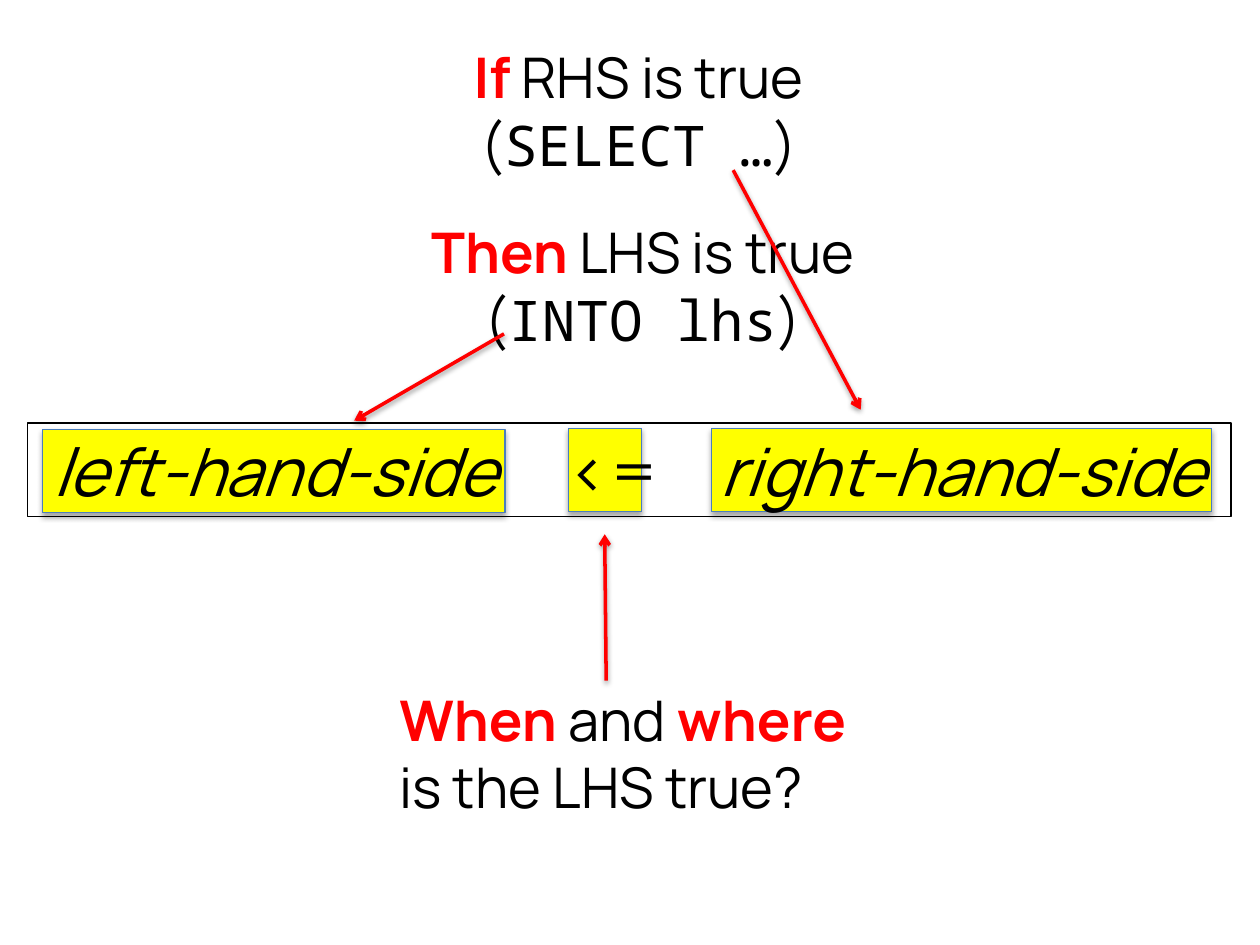
from lxml import etree
from pptx import Presentation
from pptx.dml.color import RGBColor
from pptx.enum.shapes import MSO_CONNECTOR, MSO_SHAPE
from pptx.enum.text import MSO_ANCHOR, MSO_AUTO_SIZE, PP_ALIGN
from pptx.oxml.ns import qn
from pptx.util import Cm, Pt

RECT = MSO_SHAPE.RECTANGLE
LINE = MSO_CONNECTOR.STRAIGHT
MID = MSO_ANCHOR.MIDDLE
GROW = MSO_AUTO_SIZE.SHAPE_TO_FIT_TEXT
LEFT, CENTER = PP_ALIGN.LEFT, PP_ALIGN.CENTER
SANS, MONO = "Manrope", "Noto Sans Mono"
HUES = {"black": "000000", "red": "FF0000", "yellow": "FFFF00", "blue": "4B7EBC"}
INK = {name: RGBColor.from_string(code) for name, code in HUES.items()}


def shade(shape, alpha, dist):
    """Give a shape or connector a soft shadow straight below it."""
    props = shape._element.spPr
    for old in props.findall(qn("a:effectLst")):
        props.remove(old)
    fx = etree.SubElement(props, qn("a:effectLst"))
    drop = etree.SubElement(fx, qn("a:outerShdw"), blurRad=str(Pt(3.1)),
                            dist=str(Pt(dist)), dir="5400000", rotWithShape="0")
    tone = etree.SubElement(drop, qn("a:srgbClr"), val=HUES["black"])
    etree.SubElement(tone, qn("a:alpha"), val=str(alpha * 1000))


def write(para, parts, size):
    """Add runs of (text, style); style letters: r red bold, i italic, m mono."""
    for text, style in parts:
        run = para.add_run()
        run.text = text
        font = run.font
        font.size = Pt(size)
        font.name = MONO if "m" in style else SANS
        font.bold = "r" in style
        font.italic = "i" in style
        font.color.rgb = INK["red" if "r" in style else "black"]


prs = Presentation()
prs.slide_width, prs.slide_height = Cm(25.4), Cm(19.05)
slide = prs.slides.add_slide(prs.slide_layouts[6])
shapes = slide.shapes

# Highlights behind the three parts of the rule
for x, y, wide in [(14.35, 8.64, 10.08), (0.86, 8.66, 9.32), (11.46, 8.64, 1.47)]:
    mark = shapes.add_shape(RECT, Cm(x), Cm(y), Cm(wide), Cm(1.68))
    mark.fill.solid()
    mark.fill.fore_color.rgb = INK["yellow"]
    mark.line.color.rgb = INK["blue"]
    mark.line.width = Pt(0.75)
    shade(mark, 35, 1.8)

# The rule, its parts set on tab stops
rule = shapes.add_shape(RECT, Cm(0.56), Cm(8.53), Cm(24.26), Cm(1.88))
rule.shadow.inherit = False
rule.fill.background()
rule.line.color.rgb = INK["black"]
rule.line.width = Pt(0.75)
frame = rule.text_frame
frame.word_wrap = True
frame.vertical_anchor = MID
frame.margin_left, frame.margin_right = Cm(0.51), Cm(0)
para = frame.paragraphs[0]
para.alignment = LEFT
tabs = etree.SubElement(para._p.get_or_add_pPr(), qn("a:tabLst"))
for stop in (10.39, 13.46):
    etree.SubElement(tabs, qn("a:tab"), pos=str(Cm(stop)), algn="l")
write(para, [("left-hand-side", "i"), ("\t<=\t", ""), ("right-hand-side", "i")], 38)

# Explanations: place, wrap, alignment, paragraphs
notes = [
    (8.28, 0.74, 9.19, True, CENTER,
     [[("If", "r"), (" RHS is true (", ""), ("SELECT …", "m"), (")", "")]]),
    (8.31, 4.27, 9.3, False, CENTER,
     [[("Then ", "r"), ("LHS is true", "")],
      [("(", ""), ("INTO lhs", "m"), (")", "")]]),
    (7.8, 13.69, 9.8, False, LEFT,
     [[("When ", "r"), ("and ", ""), ("where", "r")],
      [("is the LHS true?", "")]]),
]
for x, y, wide, wrap, align, paras in notes:
    frame = shapes.add_textbox(Cm(x), Cm(y), Cm(wide), Cm(3)).text_frame
    frame.word_wrap = wrap
    frame.auto_size = GROW
    for i, parts in enumerate(paras):
        para = frame.add_paragraph() if i else frame.paragraphs[0]
        para.alignment = align
        write(para, parts, 32)

# Arrows from the explanations to the rule
for ends in [(14.78, 3.43, 17.35, 8.26), (10.16, 6.73, 7.14, 8.48),
             (12.22, 13.72, 12.19, 10.77)]:
    arrow = shapes.add_connector(LINE, *map(Cm, ends))
    arrow.line.color.rgb = INK["red"]
    arrow.line.width = Pt(2)
    etree.SubElement(arrow.line._get_or_add_ln(), qn("a:tailEnd"), type="arrow")
    shade(arrow, 38, 1.6)

prs.save("out.pptx")
